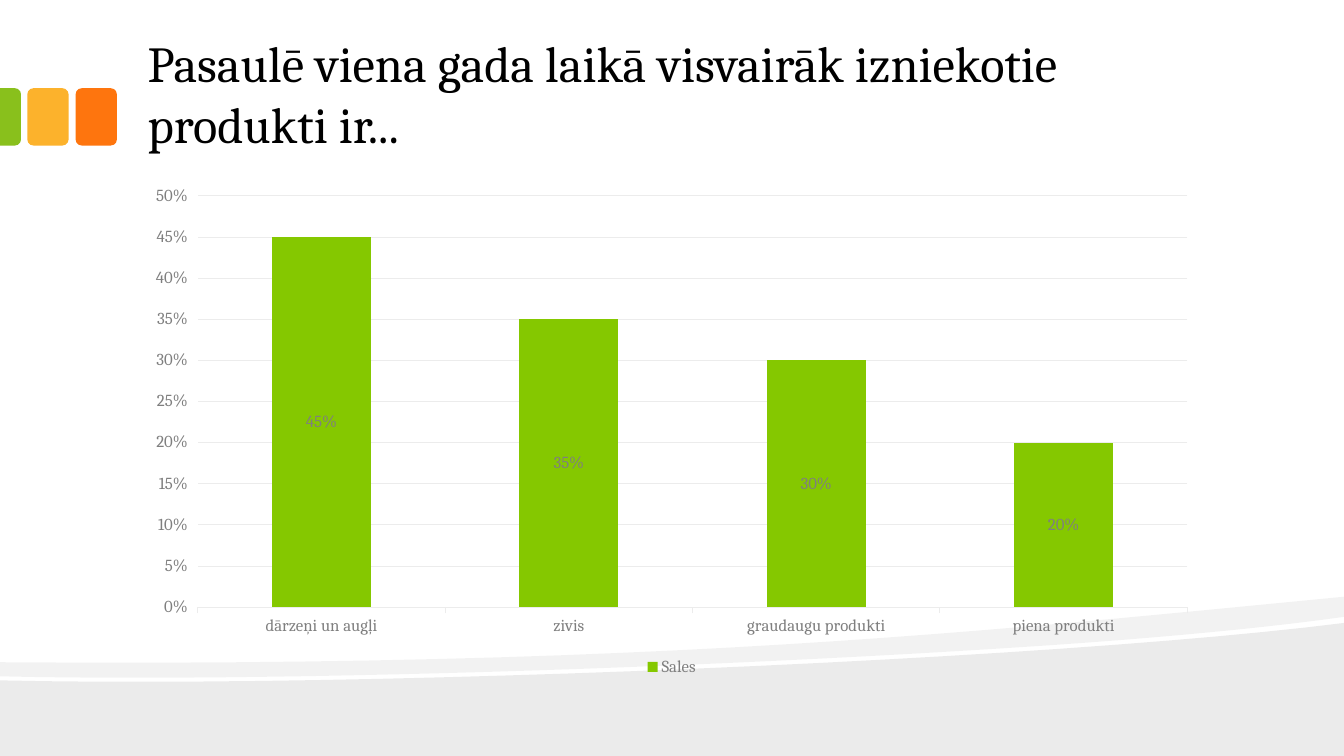
"""Build a slide with a column chart of the most wasted food products."""
from dataclasses import dataclass

from lxml import etree
from pptx import Presentation
from pptx.chart.data import CategoryChartData
from pptx.dml.color import RGBColor
from pptx.enum import chart as charts, shapes, text
from pptx.oxml import ns
from pptx.util import Pt

BLACK = RGBColor(0x00, 0x00, 0x00)
GRAY = RGBColor(0x7F, 0x7F, 0x7F)
GRID = RGBColor(0xEC, 0xEC, 0xEC)
BAR_GREEN = RGBColor(0x85, 0xC8, 0x00)
TILE_GREEN = RGBColor(0x89, 0xC0, 0x1C)
YELLOW = RGBColor(0xFC, 0xB2, 0x2C)
ORANGE = RGBColor(0xFE, 0x75, 0x0E)
FONT = "Cambria"
CURVE_STEPS = 24

Point = tuple[float, float]


@dataclass(frozen=True)
class Wave:
    """A translucent band whose edge is a chain of Bezier curves and lines."""
    start: Point
    segments: tuple[tuple[Point, ...], ...]
    opacity: int


@dataclass(frozen=True)
class Tile:
    """A rounded colour tile beside the title."""
    kind: shapes.MSO_SHAPE
    left: float
    top: float
    width: float
    height: float
    color: RGBColor
    adjustment: float
    rotation: float = 0


WAVES = (
    Wave((0, 486), (((253.44, 491.76), (750.24, 471.6), (960, 444.96)),
                    ((960, 540),), ((0, 540),)), 8),
    Wave((0, 473.04), (((469.44, 476.64), (699.12, 451.44), (960, 426.24)),
                       ((960, 440.64),),
                       ((903.6, 448.56), (827.28, 455.76), (740.88, 461.52)),
                       ((502.56, 477.36), (185.76, 487.44), (0, 483.12))), 5),
)
TILES = (
    Tile(shapes.MSO_SHAPE.ROUNDED_RECTANGLE, 54, 63, 29.5, 41, ORANGE, 0.15),
    Tile(shapes.MSO_SHAPE.ROUNDED_RECTANGLE, 19.5, 63, 29.5, 41, YELLOW, 0.15),
    Tile(shapes.MSO_SHAPE.ROUND_2_SAME_RECTANGLE, -13, 76, 41, 15, TILE_GREEN, 0.29, 90),
)
WASTE = {"dārzeņi un augļi": 0.45, "zivis": 0.35, "graudaugu produkti": 0.3,
         "piena produkti": 0.2}


def bezier(start: Point, first: Point, second: Point, end: Point) -> list[Point]:
    """Return points along a cubic curve, without its start."""
    steps = [step / CURVE_STEPS for step in range(1, CURVE_STEPS + 1)]
    return [tuple((1 - t) ** 3 * a + 3 * (1 - t) ** 2 * t * b + 3 * (1 - t) * t ** 2 * c + t ** 3 * d
                  for a, b, c, d in zip(start, first, second, end)) for t in steps]


def paint(shape, color: RGBColor) -> None:
    """Give a shape a flat fill with no outline or shadow."""
    shape.shadow.inherit = False
    shape.fill.solid()
    shape.fill.fore_color.rgb = color
    shape.line.fill.background()


def draw_wave(slide, wave: Wave) -> None:
    """Draw one translucent wave."""
    outline = [wave.start]
    for segment in wave.segments:
        outline += bezier(outline[-1], *segment) if len(segment) == 3 else segment
    corners = [(Pt(x), Pt(y)) for x, y in outline]
    builder = slide.shapes.build_freeform(*corners[0])
    builder.add_line_segments(corners[1:], close=True)
    band = builder.convert_to_shape()
    paint(band, BLACK)
    shade = band.fill._xPr.find(".//" + ns.qn("a:srgbClr"))
    etree.SubElement(shade, ns.qn("a:alpha"), val=str(wave.opacity * 1000))


def draw_tile(slide, tile: Tile) -> None:
    """Draw one colour tile."""
    block = slide.shapes.add_shape(tile.kind, Pt(tile.left), Pt(tile.top),
                                   Pt(tile.width), Pt(tile.height))
    block.rotation = tile.rotation
    block.adjustments[0] = tile.adjustment
    paint(block, tile.color)


def style(font, *, size: float = 12, color: RGBColor = GRAY) -> None:
    """Set the typeface, size and colour of a font."""
    font.name = FONT
    font.size = Pt(size)
    font.color.rgb = color


def add_text(slide, words: str, *, left: float, top: float, width: float, height: float,
             size: float, color: RGBColor) -> None:
    """Add a bottom-anchored wrapping text box."""
    frame = slide.shapes.add_textbox(Pt(left), Pt(top), Pt(width), Pt(height)).text_frame
    frame.word_wrap = True
    frame.vertical_anchor = text.MSO_ANCHOR.BOTTOM
    frame.margin_left = frame.margin_right = Pt(9.5)
    frame.margin_top = frame.margin_bottom = Pt(4.8)
    run = frame.paragraphs[0].add_run()
    run.text = words
    style(run.font, size=size, color=color)


def rule(line) -> None:
    """Format a thin chart line."""
    line.color.rgb = GRID
    line.width = Pt(0.75)


def add_waste_chart(slide) -> None:
    """Add the column chart of wasted products."""
    waste = CategoryChartData(number_format="0%")
    waste.categories = list(WASTE)
    waste.add_series("Sales", list(WASTE.values()))
    chart = slide.shapes.add_chart(charts.XL_CHART_TYPE.COLUMN_CLUSTERED, Pt(96), Pt(126),
                                   Pt(767.5), Pt(360), waste).chart
    style(chart.font, size=10, color=BLACK)
    chart.has_title = False
    chart.has_legend = True
    chart.legend.position = charts.XL_LEGEND_POSITION.BOTTOM
    chart.legend.include_in_layout = False
    style(chart.legend.font)

    for axis in (chart.category_axis, chart.value_axis):
        style(axis.tick_labels.font)
        axis.major_tick_mark = charts.XL_TICK_MARK.OUTSIDE
    rule(chart.category_axis.format.line)
    percent = chart.value_axis
    percent.format.line.fill.background()
    percent.minimum_scale, percent.maximum_scale, percent.major_unit = 0, 0.5, 0.05
    percent.tick_labels.number_format = "0%"
    percent.tick_labels.number_format_is_linked = False
    rule(percent.major_gridlines.format.line)

    bars = chart.plots[0]
    bars.gap_width = 150
    bars.vary_by_categories = False
    sales = bars.series[0]
    sales.format.fill.solid()
    sales.format.fill.fore_color.rgb = BAR_GREEN
    labels = sales.data_labels
    labels.show_value = True
    labels.position = charts.XL_LABEL_POSITION.CENTER
    labels.number_format = "0%"
    labels.number_format_is_linked = False
    style(labels.font)


def main() -> None:
    """Compose and save the slide."""
    deck = Presentation()
    deck.slide_width, deck.slide_height = Pt(960), Pt(540)
    slide = deck.slides.add_slide(deck.slide_layouts[6])
    for wave in WAVES:
        draw_wave(slide, wave)
    for tile in TILES:
        draw_tile(slide, tile)
    add_text(slide, "Pasaulē viena gada laikā visvairāk izniekotie produkti ir...",
             left=96, top=12, width=767.5, height=102.5, size=36, color=BLACK)
    add_waste_chart(slide)
    deck.save("out.pptx")


if __name__ == "__main__":
    main()
